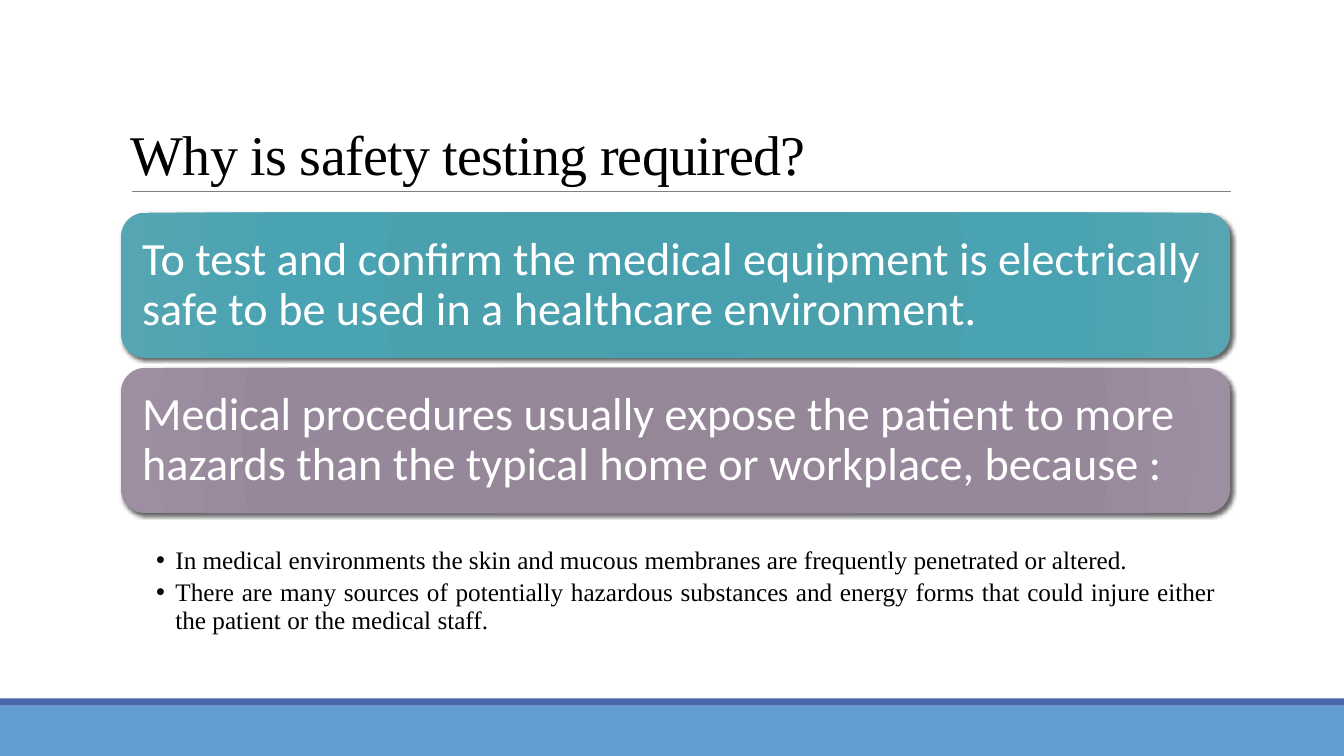
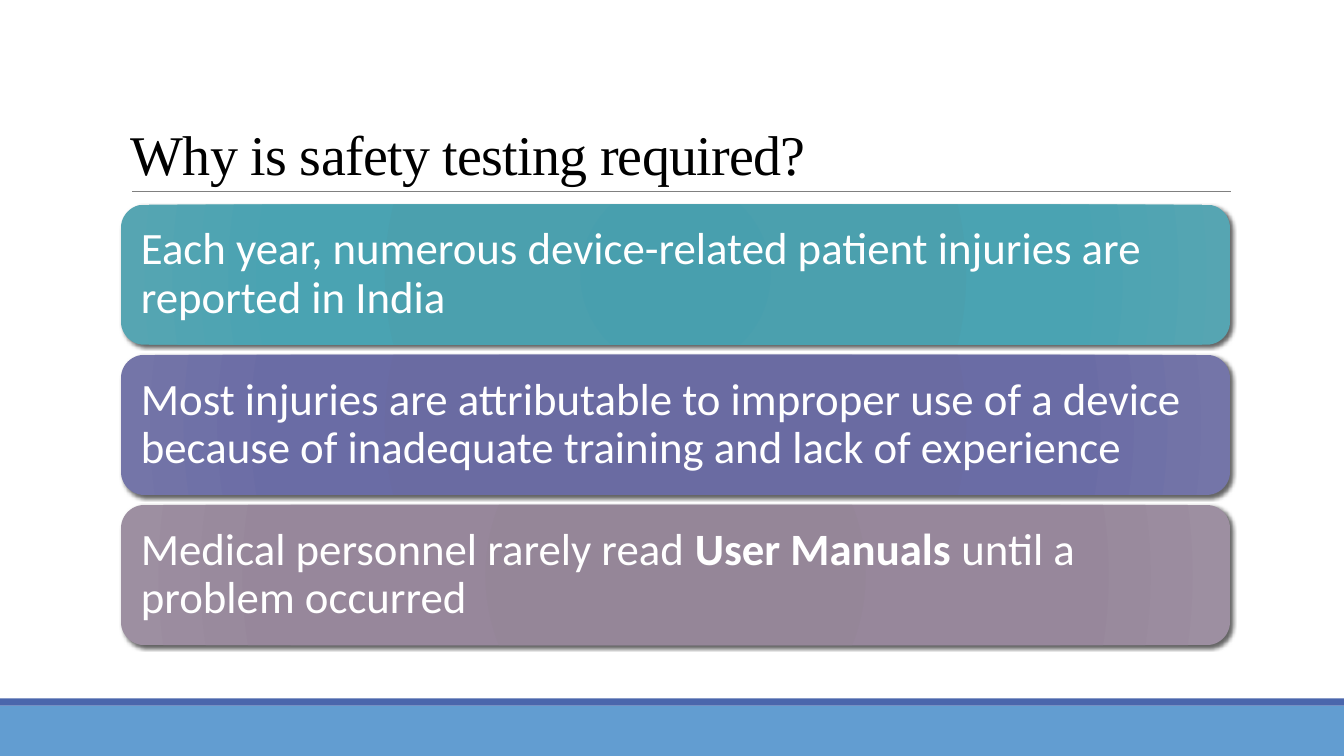
"""Build two slides on why medical equipment needs safety testing."""
from dataclasses import dataclass

from lxml import etree
from pptx import Presentation
from pptx.dml.color import RGBColor
from pptx.enum.shapes import MSO_CONNECTOR, MSO_SHAPE
from pptx.enum.text import MSO_ANCHOR, PP_ALIGN
from pptx.oxml.ns import qn
from pptx.util import Inches, Pt

RECT, ROUND = MSO_SHAPE.RECTANGLE, MSO_SHAPE.ROUNDED_RECTANGLE
STRAIGHT = MSO_CONNECTOR.STRAIGHT
TOP, MIDDLE, BOTTOM = MSO_ANCHOR.TOP, MSO_ANCHOR.MIDDLE, MSO_ANCHOR.BOTTOM
LEFT, JUSTIFY = PP_ALIGN.LEFT, PP_ALIGN.JUSTIFY

TITLE = "Why is safety testing required?"
SLIDES = [
    {
        "top": 2.11, "tall": 1.44, "size": 33, "pad": 0.14,
        "cards": [
            ("teal", ["To test and confirm the medical equipment is electrically "
                      "safe to be used in a healthcare environment."]),
            ("mauve", ["Medical procedures usually expose the patient to more "
                       "hazards than the typical home or workplace, because :"]),
        ],
        "points": [
            ["In medical environments the skin and mucous membranes are "
             "frequently penetrated or altered."],
            ["There are many sources of potentially hazardous substances and energy "
             "forms that could injure either the patient or the medical staff."],
        ],
    },
    {
        "top": 2.03, "tall": 1.39, "size": 32, "pad": 0.13,
        "cards": [
            ("teal", ["Each year, numerous device-related patient injuries are "
                      "reported in India"]),
            ("violet", ["Most injuries are attributable to improper use of a device "
                        "because of inadequate training and lack of experience"]),
            ("mauve", ["Medical personnel rarely read ", "User Manuals ",
                       "until a problem occurred"]),
        ],
        "points": [],
    },
]


@dataclass(frozen=True)
class Theme:
    """Colours, fonts and type sizes."""
    serif: str = "Times New Roman"
    sans: str = "Calibri"
    ink: str = "000000"
    white: str = "FFFFFF"
    rule: str = "808080"
    foot: str = "629DD1"
    strip: str = "4A66AC"
    title: int = 40
    point: int = 18


THEME = Theme()
FADES = {
    "teal": ("489FAE", "4BA0AE", "4AA3B2", "56A5B2"),
    "violet": ("6869A1", "6A6BA2", "6A6CA5", "7475A8"),
    "mauve": ("948497", "958698", "97879B", "9D8FA1"),
}
STOPS = (0, 34, 70, 100)
WIDE, HIGH = 13.33, 7.5
EDGE, SPAN, GAP = 1.2, 11, 0.1


def color(code):
    """Turn a hex code into a colour."""
    return RGBColor.from_string(code)


def node(parent, tag, **attrs):
    """Append a drawing element."""
    return etree.SubElement(parent, qn(tag), {k: str(v) for k, v in attrs.items()})


def write(shape, paras, font, size, ink, anchor=TOP, align=LEFT, lines=0.9,
          pads=(0.1, 0.05, 0.1, 0.05), after=0, track=0, bullet=None):
    """Fill a shape with paragraphs whose every second run is bold."""
    frame = shape.text_frame
    frame.word_wrap = True
    frame.vertical_anchor = anchor
    (frame.margin_left, frame.margin_top,
     frame.margin_right, frame.margin_bottom) = map(Inches, pads)
    for i, runs in enumerate(paras):
        para = frame.add_paragraph() if i else frame.paragraphs[0]
        para.alignment = align
        para.line_spacing = lines
        para.space_after = Pt(after)
        if bullet:
            props = para._p.get_or_add_pPr()
            props.set("marL", str(Inches(0.19)))
            props.set("indent", str(Inches(-0.19)))
            node(props, "a:buFont", typeface="Arial")
            node(props, "a:buChar", char=bullet)
        for j, text in enumerate(runs):
            run = para.add_run()
            run.text = text
            run.font.name = font
            run.font.size = Pt(size)
            run.font.bold = j % 2 == 1
            run.font.color.rgb = color(ink)
            if track:
                run.font._element.set("spc", str(track))


def box(slide, *spot):
    """Add an empty text box."""
    return slide.shapes.add_textbox(*map(Inches, spot))


def block(slide, kind, *spot):
    """Add a shape with no line or shadow."""
    shape = slide.shapes.add_shape(kind, *map(Inches, spot))
    shape.shadow.inherit = False
    shape.line.fill.background()
    return shape


def fade(shape, codes):
    """Give a shape a round gradient and a soft shadow."""
    shape.fill.gradient()
    props = shape._element.spPr
    grad = props.find(qn("a:gradFill"))
    for child in list(grad):
        grad.remove(child)
    stops = node(grad, "a:gsLst")
    for stop, code in zip(STOPS, codes):
        node(node(stops, "a:gs", pos=stop * 1000), "a:srgbClr", val=code)
    ring = node(grad, "a:path", path="circle")
    node(ring, "a:fillToRect", **dict.fromkeys("ltrb", 100000))
    shade = node(props.find(qn("a:effectLst")), "a:outerShdw", blurRad=Pt(3),
                 dist=Pt(2), dir=45 * 60000, algn="ctr", rotWithShape=0)
    node(node(shade, "a:srgbClr", val=THEME.ink), "a:alpha", val=60000)


def frame(slide):
    """Draw the bands, rule and title shared by the slides."""
    for top, tall, code in ((7, 0.5, THEME.foot), (6.93, 0.07, THEME.strip)):
        band = block(slide, RECT, 0, top, WIDE, tall)
        band.fill.solid()
        band.fill.fore_color.rgb = color(code)
    rule = slide.shapes.add_connector(
        STRAIGHT, *map(Inches, (1.31, 1.9, 12.21, 1.9)))
    rule.line.color.rgb = color(THEME.rule)
    rule.line.width = Pt(0.5)
    node(rule._element.spPr, "a:effectLst")
    write(box(slide, EDGE, 0.31, SPAN, 1.59), [[TITLE]], THEME.serif,
          THEME.title, THEME.ink, anchor=BOTTOM, lines=0.85, track=-50)


def build(slide, data):
    """Stack the cards and list the points below."""
    frame(slide)
    tall = data["tall"]
    for i, (tone, runs) in enumerate(data["cards"]):
        card = block(slide, ROUND, EDGE, data["top"] + i * (tall + GAP), SPAN, tall)
        fade(card, FADES[tone])
        write(card, [runs], THEME.sans, data["size"], THEME.white,
              anchor=MIDDLE, pads=(data["pad"],) * 4)
    if data["points"]:
        write(box(slide, EDGE, 5.4, SPAN, 0.92), data["points"], THEME.serif,
              THEME.point, THEME.ink, align=JUSTIFY, after=4, bullet="•",
              pads=(0.35, 0.03, 0.14, 0.03))


def main():
    """Make and save the deck."""
    deck = Presentation()
    deck.slide_width, deck.slide_height = Inches(WIDE), Inches(HIGH)
    for data in SLIDES:
        build(deck.slides.add_slide(deck.slide_layouts[6]), data)
    deck.save("out.pptx")


if __name__ == "__main__":
    main()
